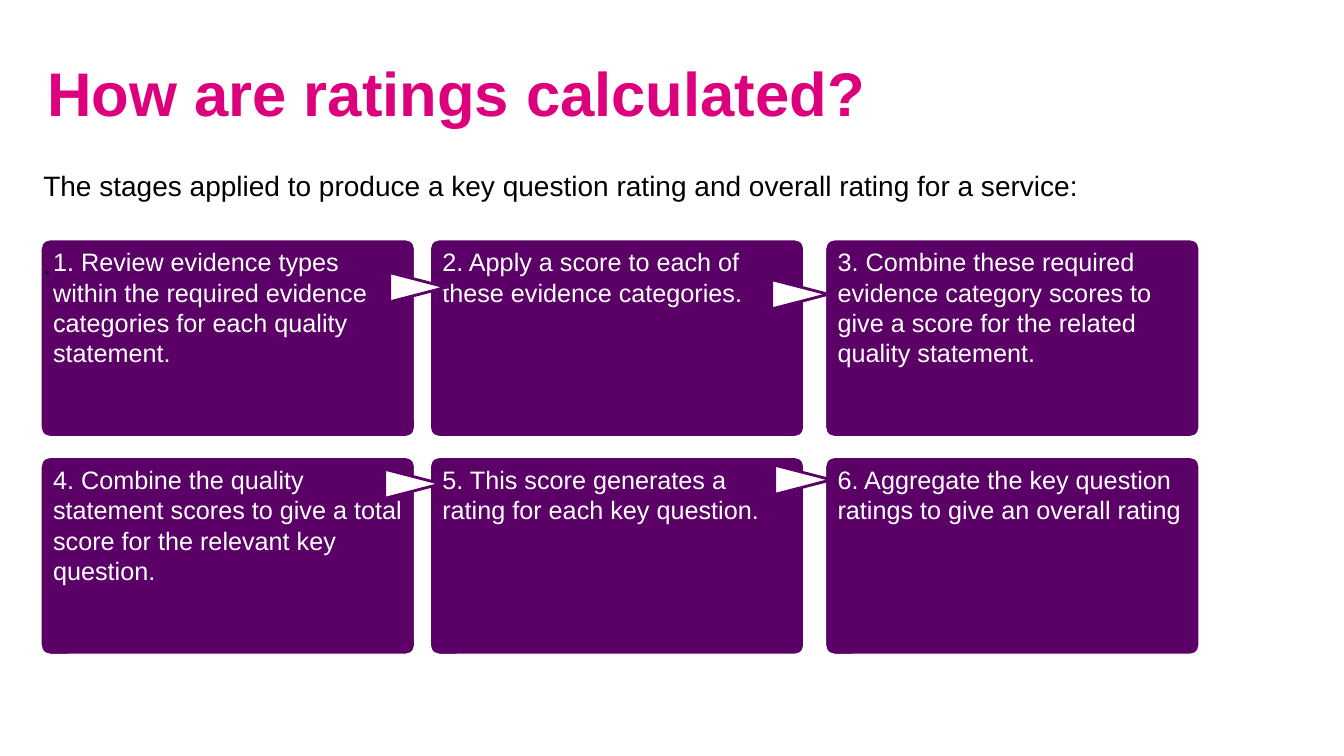
from dataclasses import dataclass

from pptx import Presentation
from pptx.dml.color import RGBColor
from pptx.enum.shapes import MSO_SHAPE
from pptx.enum.text import MSO_ANCHOR, PP_ALIGN
from pptx.util import Inches, Pt

WIDTH, HEIGHT = Inches(13.33), Inches(7.5)
PINK, PURPLE, WHITE, BLACK = "DC007D", "5A0066", "FFFFFF", "000000"

# All lengths are percentages of the slide's width or height.
COLUMNS = (3, 31.96, 61.37)
ROWS = (31.6, 60.4)
CARD_WIDTH, CARD_HEIGHT = 27.91, 26.27
POINTER_WIDTH, POINTER_HEIGHT = 2.18, 7.47


@dataclass(frozen=True)
class Stage:
    column: int
    row: int
    text: str


@dataclass(frozen=True)
class Pointer:
    center_x: float
    center_y: float


STAGES = (
    Stage(0, 1, "4. Combine the quality statement scores to give a total score "
                "for the relevant key question."),
    Stage(1, 1, "5. This score generates a rating for each key question."),
    Stage(2, 1, "6. Aggregate the key question ratings to give an overall rating"),
    Stage(2, 0, "3. Combine these required evidence category scores to give a score "
                "for the related quality statement."),
    Stage(1, 0, "2. Apply a score to each of these evidence categories."),
    Stage(0, 0, "1. Review evidence types within the required evidence categories "
                "for each quality statement."),
)
POINTERS = (Pointer(59.75, 63.47), Pointer(30.72, 64),
            Pointer(31.1, 38), Pointer(59.53, 38.93))


def color(value: str) -> RGBColor:
    return RGBColor.from_string(value)


def across(percent: float) -> int:
    return round(WIDTH * percent / 100)


def down(percent: float) -> int:
    return round(HEIGHT * percent / 100)


def area(left: float, top: float, width: float, height: float) -> tuple[int, ...]:
    return across(left), down(top), across(width), down(height)


def write(frame, text: str, size: float, ink: str, bold: bool = False) -> None:
    frame.word_wrap = True
    frame.text = text
    for para in frame.paragraphs:
        para.alignment = PP_ALIGN.LEFT
        for span in para.runs:
            span.font.name = "Arial"
            span.font.size = Pt(size)
            span.font.bold = bold
            span.font.color.rgb = color(ink)


def add_outlined(page, kind: MSO_SHAPE, place: tuple[int, ...], fill: str, line: str):
    shape = page.shapes.add_shape(kind, *place)
    shape.shadow.inherit = False
    shape.fill.solid()
    shape.fill.fore_color.rgb = color(fill)
    shape.line.color.rgb = color(line)
    shape.line.width = Pt(2)
    return shape


def add_stage(page, stage: Stage) -> None:
    place = area(COLUMNS[stage.column], ROWS[stage.row], CARD_WIDTH, CARD_HEIGHT)
    card = add_outlined(page, MSO_SHAPE.ROUNDED_RECTANGLE, place, PURPLE, WHITE)
    card.adjustments[0] = 0.05
    card.text_frame.vertical_anchor = MSO_ANCHOR.TOP
    write(card.text_frame, stage.text, 18, WHITE)


def add_pointer(page, pointer: Pointer) -> None:
    place = area(pointer.center_x - POINTER_WIDTH / 2, pointer.center_y - POINTER_HEIGHT / 2,
                 POINTER_WIDTH, POINTER_HEIGHT)
    shape = add_outlined(page, MSO_SHAPE.FLOWCHART_EXTRACT, place, WHITE, PURPLE)
    shape.rotation = 90


def main() -> None:
    deck = Presentation()
    deck.slide_width, deck.slide_height = WIDTH, HEIGHT
    page = deck.slides.add_slide(deck.slide_layouts[6])

    title = page.shapes.add_textbox(*area(2.78, 3.87, 94.52, 16.67))
    title.text_frame.vertical_anchor = MSO_ANCHOR.MIDDLE
    write(title.text_frame, "How are ratings calculated?", 44, PINK, bold=True)

    for stage in STAGES:
        add_stage(page, stage)
    for pointer in POINTERS:
        add_pointer(page, pointer)

    intro = page.shapes.add_textbox(*area(2.48, 21.6, 94.52, 64.93))
    write(intro.text_frame, "The stages applied to produce a key question rating "
                            "and overall rating for a service:\n.", 20, BLACK)
    intro.text_frame.paragraphs[1].space_before = Pt(32)

    deck.save("out.pptx")


if __name__ == "__main__":
    main()
